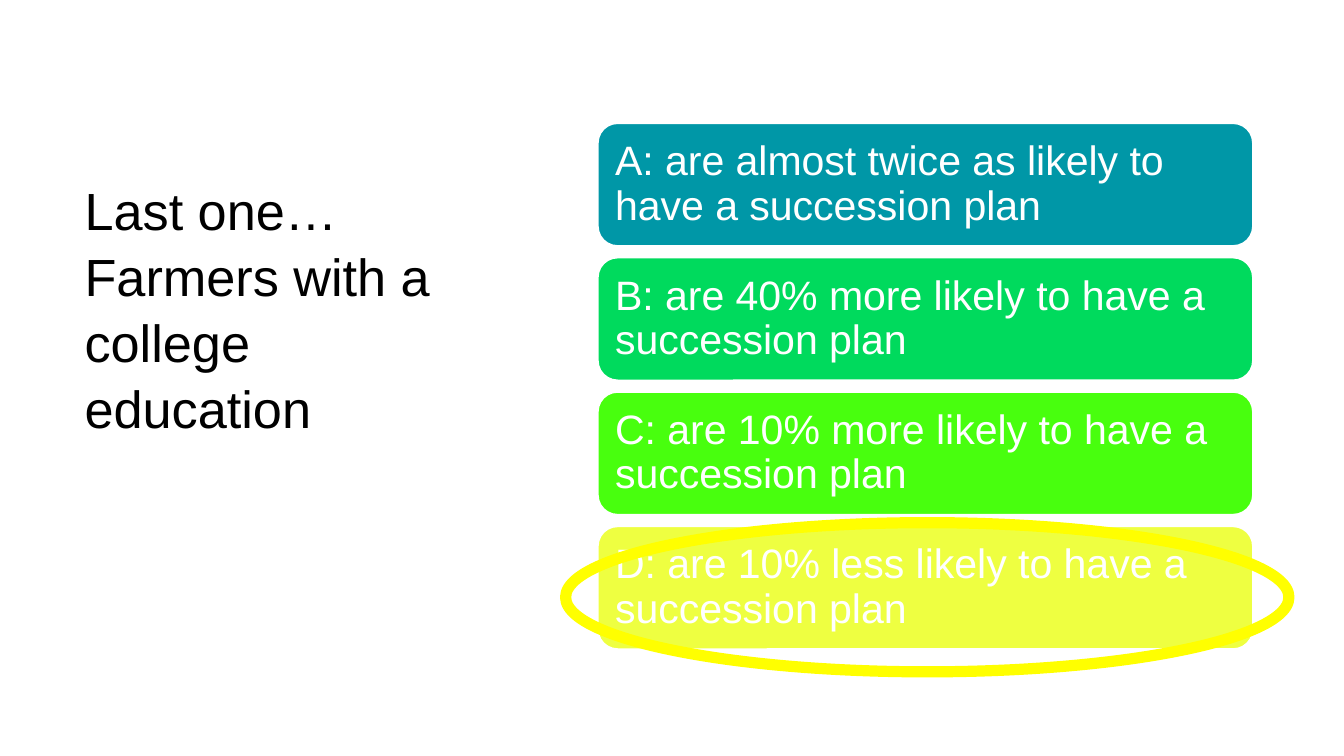
from lxml import etree
from pptx import Presentation
from pptx.dml.color import RGBColor
from pptx.enum import shapes, text
from pptx.util import Cm, Pt

QUESTION = "Last one… Farmers with a college education"
ANSWERS = [
    ("A: are almost twice as likely to have a succession plan", "0097A7"),
    ("B: are 40% more likely to have a succession plan", "00DA5D"),
    ("C: are 10% more likely to have a succession plan", "48FF0E"),
    ("D: are 10% less likely to have a succession plan", "EEFF41"),
]
LEFT, TOP, WIDTH, HEIGHT, PITCH = 11.28, 2.31, 12.42, 2.36, 2.54


def color(value):
    return RGBColor.from_string(value)


def write(shape, content, size, ink, inset, anchor, spacing):
    tf = shape.text_frame
    tf.word_wrap = True
    tf.vertical_anchor = anchor
    tf.margin_left = tf.margin_right = Cm(inset)
    tf.margin_top = tf.margin_bottom = Cm(inset)
    tf.text = content
    p = tf.paragraphs[0]
    p.alignment = text.PP_ALIGN.LEFT
    p.line_spacing = spacing
    font = p.runs[0].font
    font.name = "Arial"
    font.size = Pt(size)
    font.color.rgb = color(ink)


def add_shape(s, kind, box, fill, line, weight):
    sp = s.shapes.add_shape(kind, *map(Cm, box))
    sp.shadow.inherit = False
    if fill:
        sp.fill.solid()
        sp.fill.fore_color.rgb = color(fill)
    else:
        sp.fill.background()
    sp.line.color.rgb = color(line)
    sp.line.width = Pt(weight)
    return sp


def main():
    prs = Presentation()
    prs.slide_width, prs.slide_height = Cm(25.4), Cm(14.29)
    s = prs.slides.add_slide(prs.slide_layouts[6])

    title = s.shapes.add_textbox(Cm(1.35), Cm(3.07), Cm(7.9), Cm(5.61))
    write(title, QUESTION, 28, "000000", 0.25, text.MSO_ANCHOR.TOP, 1.05)

    for i, (answer, fill) in enumerate(ANSWERS):
        box = (LEFT, TOP + i * PITCH, WIDTH, HEIGHT)
        sp = add_shape(s, shapes.MSO_SHAPE.ROUNDED_RECTANGLE, box, fill, "FFFFFF", 2)
        write(sp, answer, 22, "FFFFFF", 0.23, text.MSO_ANCHOR.MIDDLE, 0.9)

    add_shape(s, shapes.MSO_SHAPE.OVAL, (10.69, 9.88, 13.67, 2.82), None, "FFFF00", 6)
    prs.save("out.pptx")


if __name__ == "__main__":
    main()
